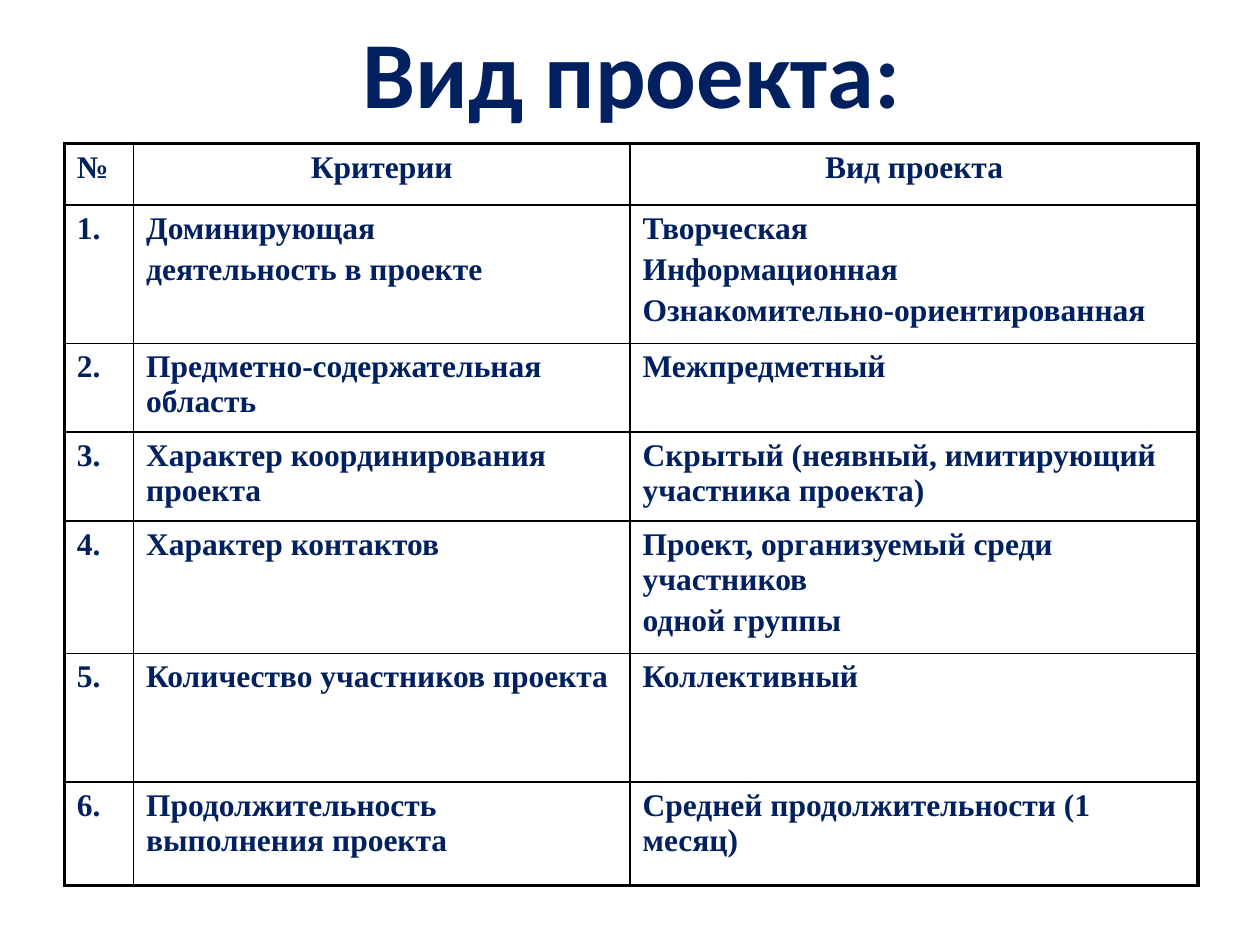
from lxml import etree
from pptx import Presentation
from pptx import util as u
from pptx.dml.color import RGBColor
from pptx.enum import text
from pptx.oxml import ns

THEME = {
    "title": {"name": "Calibri", "size": u.Pt(54), "bold": True},
    "body": {"name": "Times New Roman", "size": u.Pt(18), "bold": True},
    "ink": RGBColor.from_string("002060"),
    "rule": "000000",
    "thin": 1,
    "thick": 2.25,
}
ROWS = [
    ("№", "Критерии", "Вид проекта"),
    ("1.", "Доминирующая\nдеятельность в проекте",
     "Творческая\nИнформационная\nОзнакомительно-ориентированная"),
    ("2.", "Предметно-содержательная область", "Межпредметный"),
    ("3.", "Характер координирования проекта",
     "Скрытый (неявный, имитирующий участника проекта)"),
    ("4.", "Характер контактов",
     "Проект, организуемый среди участников\nодной группы"),
    ("5.", "Количество участников проекта", "Коллективный"),
    ("6.", "Продолжительность выполнения проекта",
     "Средней продолжительности (1 месяц)"),
]
WIDTHS = [39.6, 283.7, 324.7]
HEIGHTS = [35, 79.2, 50.4, 51, 75.6, 73.4, 59.4]


def write(frame, content, style, align):
    for index, line in enumerate(content.split("\n")):
        para = frame.paragraphs[0] if index == 0 else frame.add_paragraph()
        para.alignment = align
        if index:
            para.space_before = u.Pt(3.6)
        span = para.add_run()
        span.text = line
        for key, value in THEME[style].items():
            setattr(span.font, key, value)
        span.font.color.rgb = THEME["ink"]


def add_borders(cell, outer_sides):
    properties = cell._tc.get_or_add_tcPr()
    for index, (side, outer) in enumerate(outer_sides.items()):
        width = u.Pt(THEME["thick" if outer else "thin"])
        line = etree.Element(ns.qn(f"a:ln{side}"), w=str(int(width)))
        fill = etree.SubElement(line, ns.qn("a:solidFill"))
        etree.SubElement(fill, ns.qn("a:srgbClr"), val=THEME["rule"])
        properties.insert(index, line)


deck = Presentation()
deck.slide_width, deck.slide_height = u.Pt(720), u.Pt(540)
page = deck.slides.add_slide(deck.slide_layouts[6])

title = page.shapes.add_textbox(u.Pt(198.7), u.Pt(4.3), u.Pt(324.7), u.Pt(72.7))
title.text_frame.word_wrap = False
title.text_frame.auto_size = text.MSO_AUTO_SIZE.SHAPE_TO_FIT_TEXT
write(title.text_frame, "Вид проекта:", "title", text.PP_ALIGN.CENTER)

table = page.shapes.add_table(
    len(ROWS), len(WIDTHS), u.Pt(36.7), u.Pt(82.1),
    u.Pt(sum(WIDTHS)), u.Pt(sum(HEIGHTS))).table
table.first_row = table.horz_banding = False
for column, width in zip(table.columns, WIDTHS):
    column.width = u.Pt(width)
for row, height in zip(table.rows, HEIGHTS):
    row.height = u.Pt(height)

for r, row in enumerate(ROWS):
    for c, content in enumerate(row):
        cell = table.cell(r, c)
        cell.fill.background()
        centred = r == 0 and c > 0
        align = text.PP_ALIGN.CENTER if centred else text.PP_ALIGN.LEFT
        write(cell.text_frame, content, "body", align)
        add_borders(cell, {"L": c == 0, "R": c == len(WIDTHS) - 1,
                           "T": r == 0, "B": r == len(ROWS) - 1})

deck.save("out.pptx")
